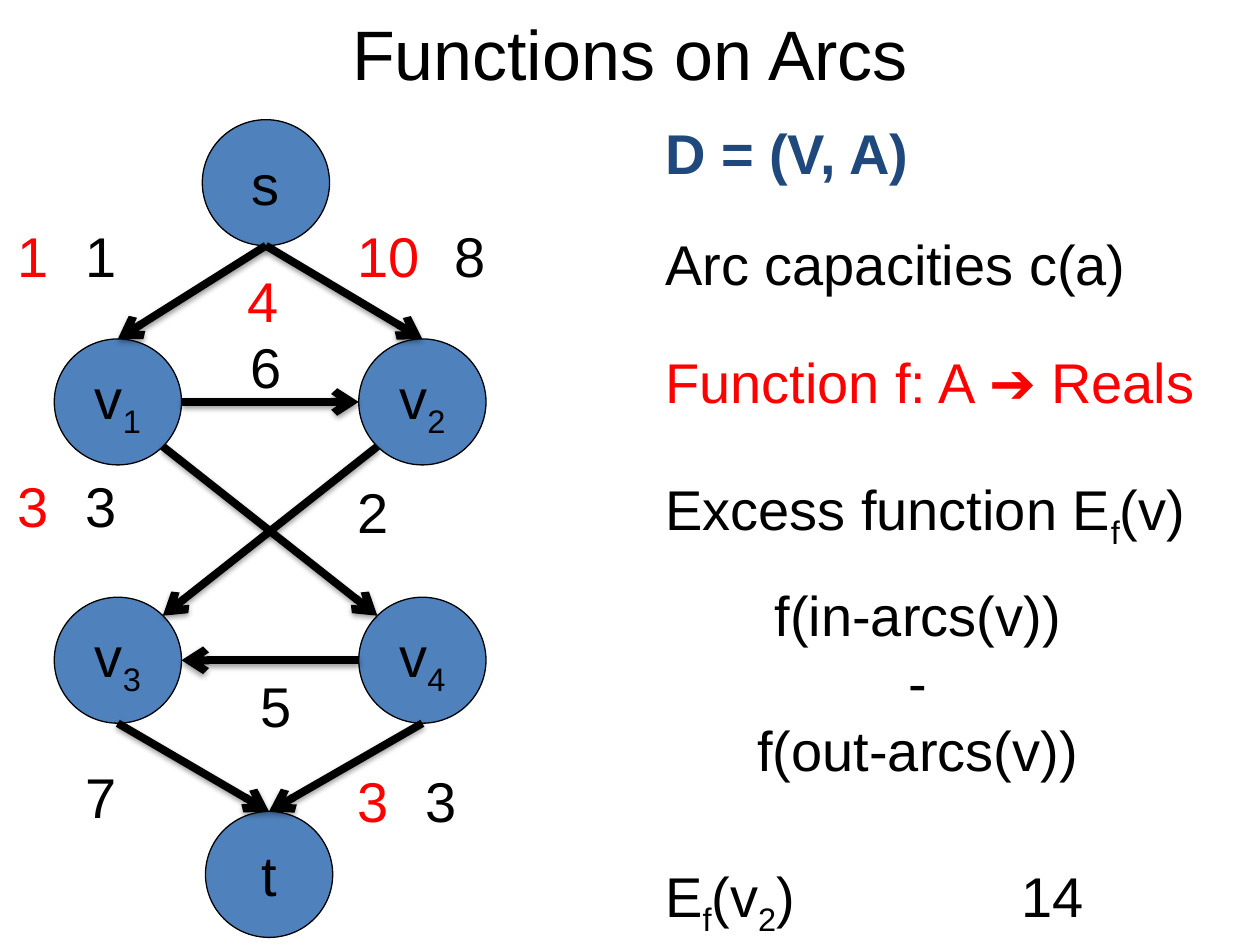
from lxml import etree
from pptx import Presentation
from pptx import util as u
from pptx.dml.color import RGBColor
from pptx.enum import shapes, text
from pptx.oxml import ns, parse_xml

Pt = u.Pt
COLORS = {"black": "000000", "red": "FF0000", "navy": "1F497D", "node": "4F81BD"}
NODE_WIDTH, NODE_HEIGHT = 72.7, 72
DIAGONAL = 0.5 ** 0.5
SHADOW = (
    f'<a:effectLst {ns.nsdecls("a")}>'
    '<a:outerShdw blurRad="40000" dist="20000" dir="5400000" rotWithShape="0">'
    '<a:srgbClr val="000000"><a:alpha val="38000"/></a:srgbClr>'
    '</a:outerShdw></a:effectLst>'
)


def write(box, lines, color="black", size=32, bold=False, centred=False):
    """Fill a shape with lines of text; the letter after each "_" is a subscript."""
    frame = box.text_frame
    frame.word_wrap = False
    for index, line in enumerate(lines.split("\n")):
        para = frame.add_paragraph() if index else frame.paragraphs[0]
        para.alignment = text.PP_ALIGN.CENTER if centred else text.PP_ALIGN.LEFT
        plain, *rest = line.split("_")
        pieces = [(plain, False)]
        for part in rest:
            pieces += [(part[0], True), (part[1:], False)]
        for content, lowered in pieces:
            if not content:
                continue
            span = para.add_run()
            span.text = content
            span.font.name = "Arial"
            span.font.size = Pt(size)
            span.font.bold = bold
            span.font.color.rgb = RGBColor.from_string(COLORS[color])
            if lowered:
                span.font._element.set("baseline", "-25000")


def rim_point(name, side):
    """Return the point where an arc meets a node; side is a unit direction."""
    left, top = nodes[name]
    return (Pt(left + NODE_WIDTH / 2 * (1 + side[0])),
            Pt(top + NODE_HEIGHT / 2 * (1 + side[1])))


deck = Presentation()
deck.slide_width, deck.slide_height = Pt(720), Pt(540)
slide = deck.slides.add_slide(deck.slide_layouts[6])

title = slide.shapes.add_textbox(Pt(36), Pt(4.3), Pt(648), Pt(51))
title.text_frame.vertical_anchor = text.MSO_ANCHOR.MIDDLE
write(title, "Functions on Arcs", size=40, centred=True)

# Nodes: two columns of v nodes between the source and the sink
nodes = {
    "s": (115.6, 68.4),
    "v_1": (31, 193.7), "v_2": (205, 193.7),
    "v_3": (31, 341.3), "v_4": (205, 341.3),
    "t": (117.4, 463.7),
}
for name, (left, top) in nodes.items():
    node = slide.shapes.add_shape(shapes.MSO_SHAPE.OVAL, Pt(left), Pt(top),
                                  Pt(NODE_WIDTH), Pt(NODE_HEIGHT))
    node.shadow.inherit = False
    node.fill.solid()
    node.fill.fore_color.rgb = RGBColor.from_string(COLORS["node"])
    node.line.color.rgb = RGBColor.from_string(COLORS["black"])
    node.line.width = Pt(0.75)
    node.text_frame.vertical_anchor = text.MSO_ANCHOR.MIDDLE
    write(node, name, centred=True)

# Arcs: start node and side, end node and side
TOP, BOTTOM, LEFT, RIGHT = (0, -1), (0, 1), (-1, 0), (1, 0)
TOP_LEFT, TOP_RIGHT = (-DIAGONAL, -DIAGONAL), (DIAGONAL, -DIAGONAL)
BOTTOM_LEFT, BOTTOM_RIGHT = (-DIAGONAL, DIAGONAL), (DIAGONAL, DIAGONAL)
arcs = [
    ("s", BOTTOM, "v_1", TOP),
    ("s", BOTTOM, "v_2", TOP),
    ("v_1", RIGHT, "v_2", LEFT),
    ("v_1", BOTTOM_RIGHT, "v_4", TOP_LEFT),
    ("v_2", BOTTOM_LEFT, "v_3", TOP_RIGHT),
    ("v_4", LEFT, "v_3", RIGHT),
    ("v_3", BOTTOM, "t", TOP),
    ("v_4", BOTTOM, "t", TOP),
]
for start, start_side, end, end_side in arcs:
    arc = slide.shapes.add_connector(shapes.MSO_CONNECTOR.STRAIGHT,
                                     *rim_point(start, start_side),
                                     *rim_point(end, end_side))
    arc.line.color.rgb = RGBColor.from_string(COLORS["black"])
    arc.line.width = Pt(4.5)
    etree.SubElement(arc.line._get_or_add_ln(), ns.qn("a:tailEnd"), type="arrow")
    arc._element.spPr.append(parse_xml(SHADOW))

# Arc labels: capacities in black, function values in red
labels = [
    ("1", 41.8, 123.1, "black"), ("8", 252.7, 123.1, "black"),
    ("6", 136.1, 186.5, "black"), ("3", 41.8, 265.7, "black"),
    ("2", 197.3, 269.3, "black"), ("5", 141.8, 380.2, "black"),
    ("7", 41.8, 432, "black"), ("3", 236.2, 434.2, "black"),
    ("1", 2.9, 123.1, "red"), ("10", 197.3, 123.1, "red"),
    ("4", 134.6, 149, "red"), ("3", 2.9, 265.7, "red"),
    ("3", 197.3, 434.2, "red"),
]
for value, left, top, color in labels:
    width = 14.6 + 17.8 * len(value)
    box = slide.shapes.add_textbox(Pt(left), Pt(top), Pt(width), Pt(46))
    write(box, value, color)

# Definitions on the right
definitions = [
    ("D = (V, A)", 373, 64.1, 154.8, "navy"),
    ("Arc capacities c(a)", 373, 127.4, 280, "black"),
    ("Function f: A ➔ Reals", 373, 195.1, 327.6, "red"),
    ("Excess function E_f(v)", 373, 267.8, 322.6, "black"),
    ("E_f(v_2)", 373, 488.9, 91.4, "black"),
    ("14", 576.7, 488.9, 50.4, "black"),
]
for content, left, top, width, color in definitions:
    box = slide.shapes.add_textbox(Pt(left), Pt(top), Pt(width), Pt(46))
    write(box, content, color, bold=color == "navy")

excess = slide.shapes.add_textbox(Pt(421.2), Pt(328.3), Pt(206.6), Pt(123.8))
write(excess, "f(in-arcs(v))\n-\nf(out-arcs(v))", centred=True)

deck.save("out.pptx")
